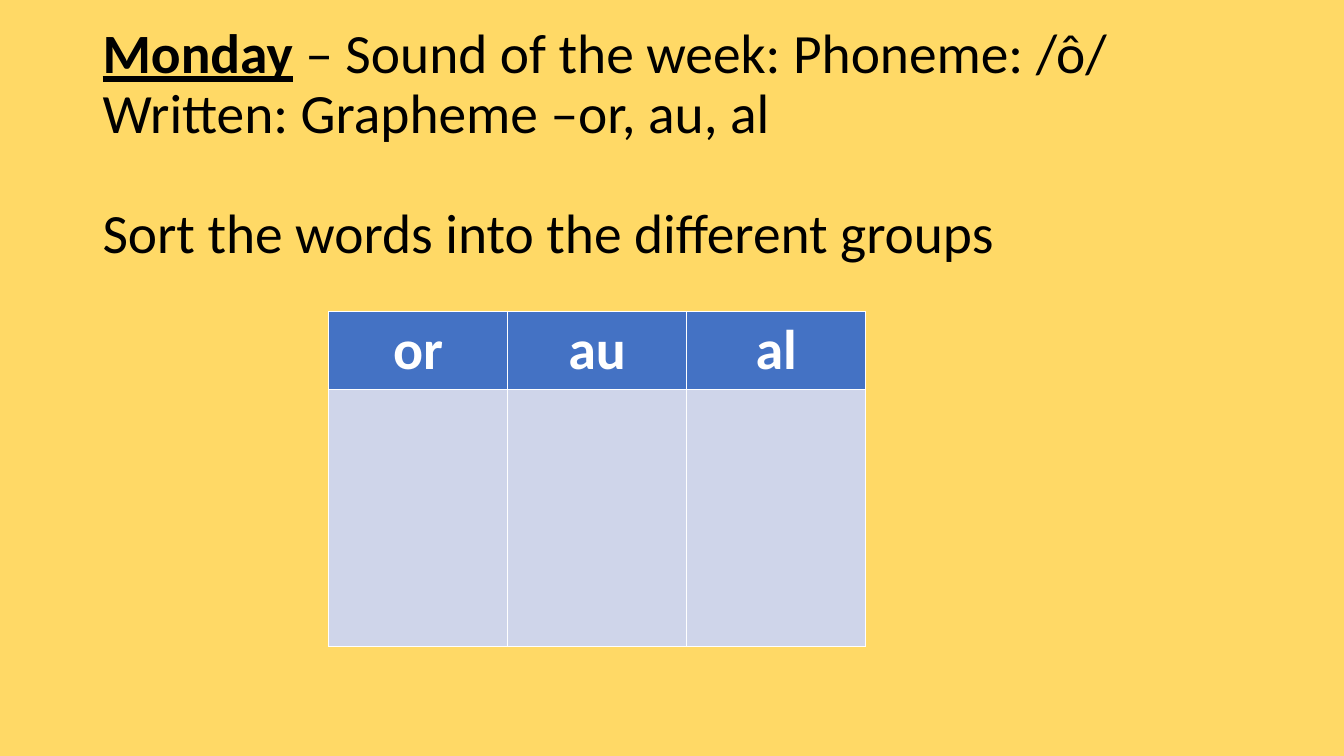
from dataclasses import dataclass

from pptx import Presentation
from pptx.dml.color import RGBColor
from pptx.enum.text import MSO_ANCHOR, MSO_AUTO_SIZE, PP_ALIGN
from pptx.slide import Slide
from pptx.util import Cm, Pt

FONT = "Calibri"
BACKGROUND, BLACK, WHITE = "FFD966", "000000", "FFFFFF"
HEADER_FILL, BODY_FILL = "4472C4", "CFD5EA"


@dataclass(frozen=True)
class SortRow:
    height: float
    fill: str
    words: tuple[str, ...]


SORT_ROWS = (
    SortRow(1.97, HEADER_FILL, ("or", "au", "al")),
    SortRow(6.47, BODY_FILL, ("", "", "")),
)


def rgb(value: str) -> RGBColor:
    return RGBColor.from_string(value)


def style_text(p, size: float, color: str, align: PP_ALIGN) -> None:
    p.alignment = align
    p.font.name, p.font.size = FONT, Pt(size)
    p.font.color.rgb = rgb(color)


def add_title(s: Slide) -> None:
    sp = s.shapes.title
    sp.left, sp.top, sp.width, sp.height = Cm(2.33), Cm(1.83), Cm(29.21), Cm(3.68)
    tf = sp.text_frame
    tf.word_wrap = True
    tf.auto_size = MSO_AUTO_SIZE.NONE
    tf.vertical_anchor = MSO_ANCHOR.MIDDLE

    sound = tf.paragraphs[0]
    day = sound.add_run()
    day.text = "Monday"
    day.font.bold = day.font.underline = True
    sound.add_run().text = " – Sound of the week: Phoneme: /ô/ "
    sound.add_line_break()
    sound.add_run().text = "Written: Grapheme –or, au, al"

    task = tf.add_paragraph()
    task.text = "Sort the words into the different groups"
    task.space_before = Pt(43)
    for p in tf.paragraphs:
        style_text(p, 39.6, BLACK, PP_ALIGN.LEFT)
        p.line_spacing = 0.9


def add_sort_table(s: Slide) -> None:
    columns = len(SORT_ROWS[0].words)
    height = sum(row.height for row in SORT_ROWS)
    table = s.shapes.add_table(len(SORT_ROWS), columns, Cm(8.28), Cm(7.85),
                               Cm(13.54), Cm(height)).table
    for r, row in enumerate(SORT_ROWS):
        table.rows[r].height = Cm(row.height)
        for c, word in enumerate(row.words):
            cell = table.cell(r, c)
            cell.fill.solid()
            cell.fill.fore_color.rgb = rgb(row.fill)
            if word:
                cell.text = word
                p = cell.text_frame.paragraphs[0]
                style_text(p, 40, WHITE, PP_ALIGN.CENTER)
                p.font.bold = True


def main() -> None:
    prs = Presentation()
    prs.slide_width, prs.slide_height = Cm(33.87), Cm(19.05)
    s = prs.slides.add_slide(prs.slide_layouts.get_by_name("Title Only"))
    s.background.fill.solid()
    s.background.fill.fore_color.rgb = rgb(BACKGROUND)
    add_title(s)
    add_sort_table(s)
    prs.save("out.pptx")


if __name__ == "__main__":
    main()
